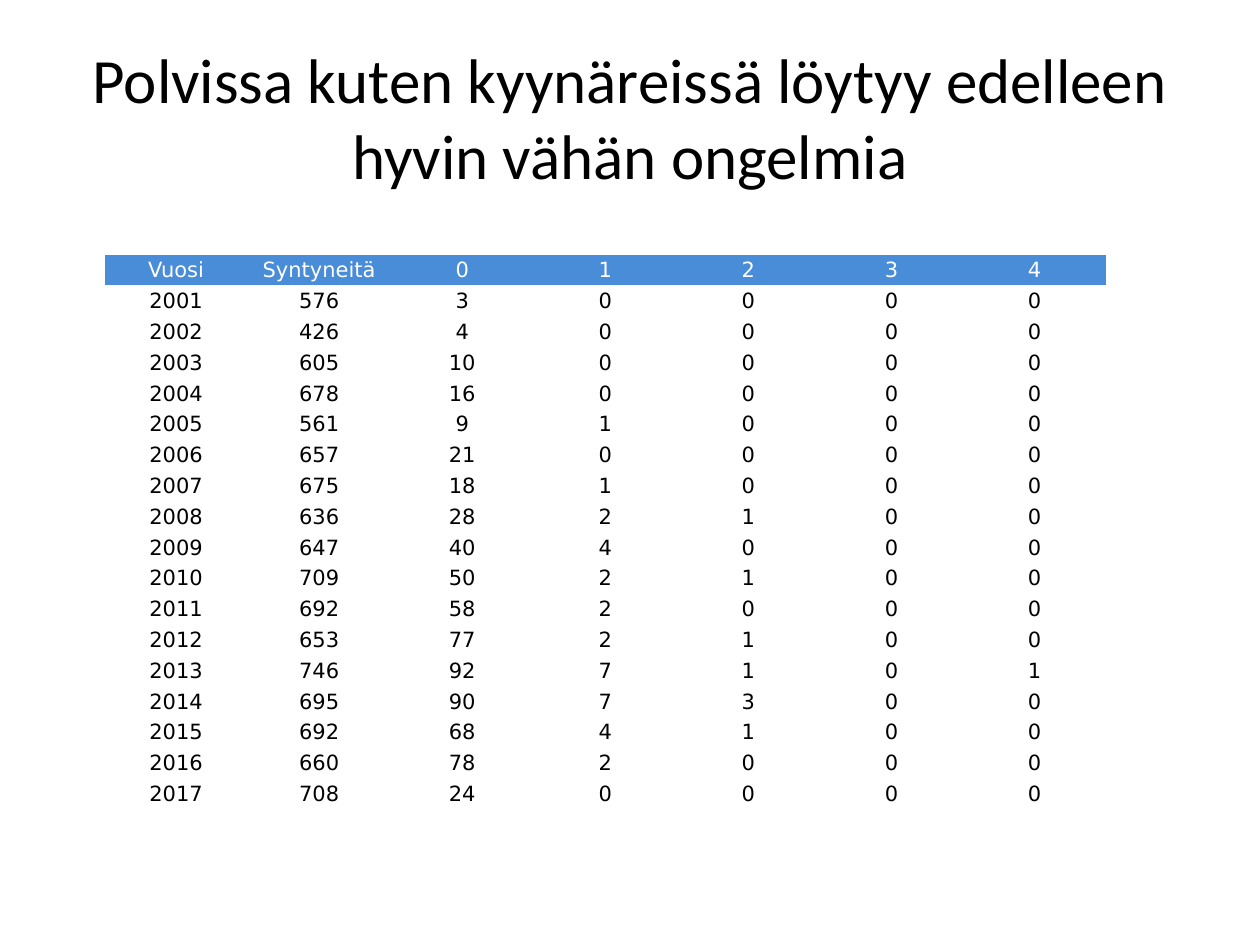
from typing import NamedTuple

from pptx import Presentation
from pptx.dml.color import RGBColor
from pptx.enum.text import MSO_ANCHOR, PP_ALIGN
from pptx.oxml.ns import qn
from pptx.util import Inches, Pt

CENTER = PP_ALIGN.CENTER
MIDDLE = MSO_ANCHOR.MIDDLE
TITLE_ONLY_LAYOUT = 5
NO_STYLE_NO_GRID = "{2D5ABB26-0587-4C30-8999-92F81FD0307C}"

TITLE = "Polvissa kuten kyynäreissä löytyy edelleen hyvin vähän ongelmia"
HEADERS = ("Vuosi", "Syntyneitä", "0", "1", "2", "3", "4")
FIRST_YEAR = 2001
# One row a year, in the order of the headers after "Vuosi"
YEARLY_COUNTS = (
    (576, 3, 0, 0, 0, 0),
    (426, 4, 0, 0, 0, 0),
    (605, 10, 0, 0, 0, 0),
    (678, 16, 0, 0, 0, 0),
    (561, 9, 1, 0, 0, 0),
    (657, 21, 0, 0, 0, 0),
    (675, 18, 1, 0, 0, 0),
    (636, 28, 2, 1, 0, 0),
    (647, 40, 4, 0, 0, 0),
    (709, 50, 2, 1, 0, 0),
    (692, 58, 2, 0, 0, 0),
    (653, 77, 2, 1, 0, 0),
    (746, 92, 7, 1, 0, 1),
    (695, 90, 7, 3, 0, 0),
    (692, 68, 4, 1, 0, 0),
    (660, 78, 2, 0, 0, 0),
    (708, 24, 0, 0, 0, 0),
)


class TextStyle(NamedTuple):
    font: str
    size: int
    color: str


class TableRow(NamedTuple):
    texts: tuple
    style: TextStyle
    fill: str


TITLE_STYLE = TextStyle("Calibri", 36, "000000")
HEADER_STYLE = TextStyle("DejaVu Sans", 12, "FFFFFF")
BODY_STYLE = HEADER_STYLE._replace(color="000000")


def rgb(color: str) -> RGBColor:
    return RGBColor.from_string(color)


def add_centered_run(text_frame, text: str, style: TextStyle) -> None:
    paragraph = text_frame.paragraphs[0]
    paragraph.alignment = CENTER
    run = paragraph.add_run()
    run.text = text
    run.font.name = style.font
    run.font.size = Pt(style.size)
    run.font.color.rgb = rgb(style.color)


def fill_cell(cell, text: str, row: TableRow) -> None:
    cell.fill.solid()
    cell.fill.fore_color.rgb = rgb(row.fill)
    cell.vertical_anchor = MIDDLE
    cell.margin_left = cell.margin_top = cell.margin_right = Inches(0.01)
    cell.margin_bottom = 0
    add_centered_run(cell.text_frame, text, row.style)


def add_title(slide) -> None:
    title = slide.shapes.title
    title.left, title.top = Inches(0.5), Inches(0.3)
    title.width, title.height = Inches(9), Inches(1.25)
    title.text_frame.vertical_anchor = MIDDLE
    add_centered_run(title.text_frame, TITLE, TITLE_STYLE)


def table_rows() -> list[TableRow]:
    """Header, one row per year and the blank row that closes the table."""
    rows = [TableRow(HEADERS, HEADER_STYLE, "498CD8")]
    for year, counts in enumerate(YEARLY_COUNTS, FIRST_YEAR):
        texts = tuple(str(value) for value in (year, *counts))
        rows.append(TableRow(texts, BODY_STYLE, "FFFFFF"))
    rows.append(TableRow(("",) * len(HEADERS), BODY_STYLE, "FFFFFF"))
    return rows


def add_results_table(slide, rows: list[TableRow]) -> None:
    frame = slide.shapes.add_table(
        len(rows), len(HEADERS),
        Inches(0.83), Inches(2.02), Inches(7.95), Inches(4.65),
    )
    table = frame.table
    table.horz_banding = False
    for style_id in frame.element.iter(qn("a:tableStyleId")):
        style_id.text = NO_STYLE_NO_GRID
    for row_index, row in enumerate(rows):
        for column_index, text in enumerate(row.texts):
            fill_cell(table.cell(row_index, column_index), text, row)


def main() -> None:
    presentation = Presentation()
    presentation.slide_width = Inches(10)
    presentation.slide_height = Inches(7.5)
    layout = presentation.slide_layouts[TITLE_ONLY_LAYOUT]
    slide = presentation.slides.add_slide(layout)
    add_title(slide)
    add_results_table(slide, table_rows())
    presentation.save("out.pptx")


if __name__ == "__main__":
    main()
